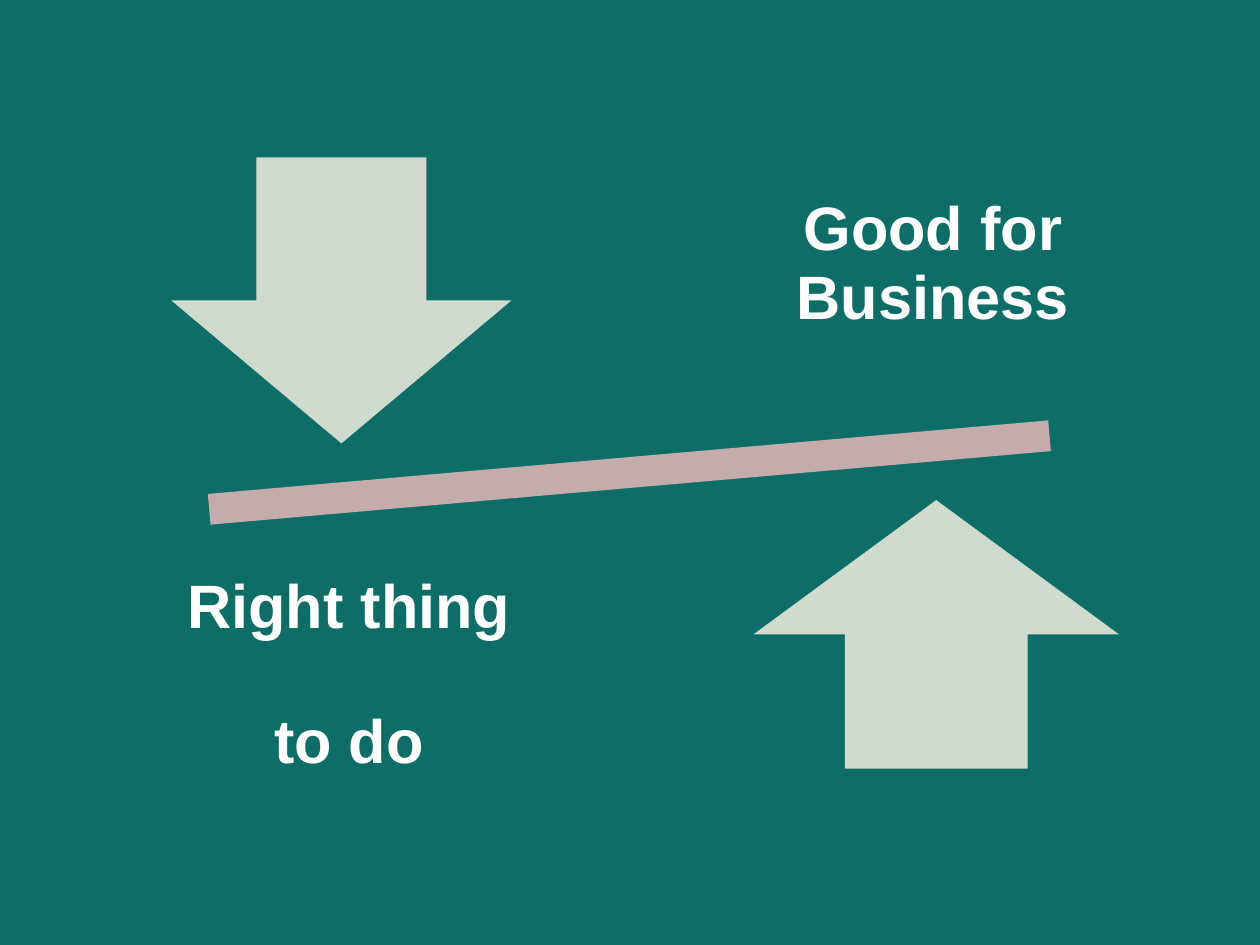
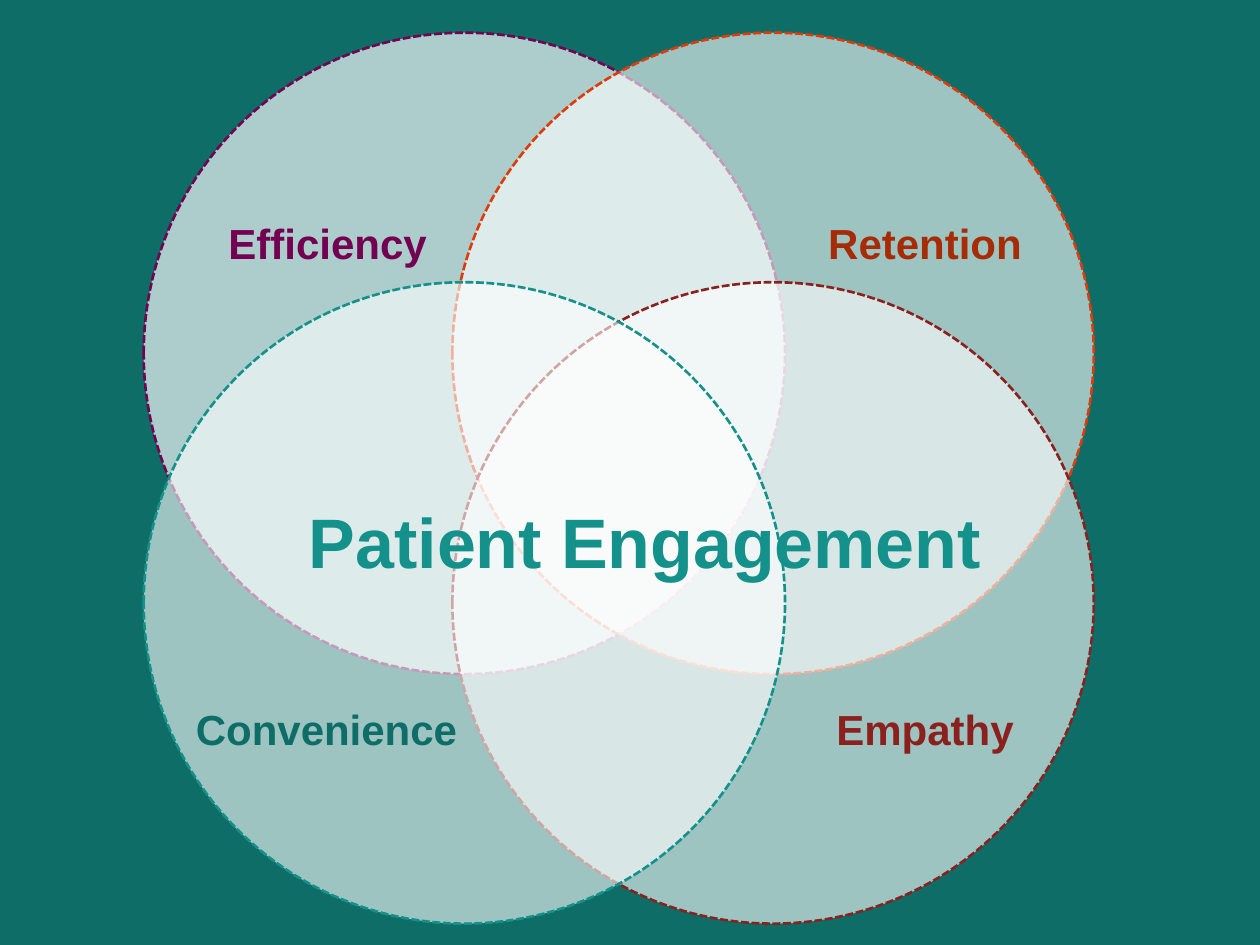
from lxml import etree
from pptx import Presentation
from pptx.dml.color import RGBColor
from pptx.enum import dml, shapes, text
from pptx.oxml import ns
from pptx.util import Pt

TEAL = RGBColor(0x0E, 0x6D, 0x67)
AQUA = RGBColor(0x13, 0x91, 0x8A)
SAGE = RGBColor(0xD0, 0xDB, 0xD0)
ROSE = RGBColor(0xC4, 0xAC, 0xAC)
WHITE = RGBColor(0xFF, 0xFF, 0xFF)
PLUM = RGBColor(0x73, 0x00, 0x51)
FLAME = RGBColor(0xDE, 0x3B, 0x0A)
RUST = RGBColor(0xA6, 0x2C, 0x08)
WINE = RGBColor(0x8B, 0x21, 0x1E)
FONT = "Arial"
KIND = shapes.MSO_SHAPE


def add_slide(deck):
    slide = deck.slides.add_slide(deck.slide_layouts[6])
    fill = slide.background.fill
    fill.solid()
    fill.fore_color.rgb = TEAL
    return slide


def add_shape(slide, kind, box, color, alpha=None, edge=None, turn=0):
    shape = slide.shapes.add_shape(kind, *map(Pt, box))
    shape.shadow.inherit = False
    shape.rotation = turn
    shape.fill.solid()
    shape.fill.fore_color.rgb = color
    if alpha is not None:
        tint = shape.fill._xPr.find(".//" + ns.qn("a:srgbClr"))
        etree.SubElement(tint, ns.qn("a:alpha")).set("val", str(alpha * 1000))
    if edge is None:
        shape.line.fill.background()
    else:
        shape.line.color.rgb = edge
        shape.line.width = Pt(1.5)
        shape.line.dash_style = dml.MSO_LINE.SQUARE_DOT


def add_text(slide, box, words, size=24, color=WHITE, inset=(7.2, 6.5),
             anchor=text.MSO_ANCHOR.TOP, pitch=1, gap=0):
    frame = slide.shapes.add_textbox(*map(Pt, box)).text_frame
    frame.word_wrap = True
    frame.vertical_anchor = anchor
    frame.margin_left = frame.margin_right = Pt(inset[0])
    frame.margin_top = Pt(inset[1])
    frame.margin_bottom = Pt(min(inset))
    frame.text = words
    for index, para in enumerate(frame.paragraphs):
        para.alignment = text.PP_ALIGN.CENTER
        para.line_spacing = pitch
        if index:
            para.space_before = Pt(gap)
        para.font.name = FONT
        para.font.size = Pt(size)
        para.font.bold = True
        para.font.color.rgb = color


def draw_scale(slide, box):
    left, top, width, height = box
    add_shape(slide, KIND.MATH_MINUS,
              (left, top + 142.6, width, 74.9), ROSE, turn=355)
    add_shape(slide, KIND.DOWN_ARROW, (left + 66.2, top, 194.4, 163.4), SAGE)
    add_shape(slide, KIND.UP_ARROW,
              (left + 398.9, top + height - 153.4, 208.8, 153.4), SAGE)
    style = dict(size=35, inset=(19.4, 19.4), pitch=0.94,
                 anchor=text.MSO_ANCHOR.MIDDLE, gap=37.5)
    add_text(slide, (left + 397.4, top + 2.2, 208.1, 118.1),
             "Good for Business", **style)
    add_text(slide, (left + 55.4, top + 233.3, 224.6, 125.3),
             "Right thing\nto do", **style)


def draw_venn(slide, box):
    left, top, width, height = box
    side = 366.5
    rings = [(0, 0, PLUM, 66), (1, 0, FLAME, 60),
             (1, 1, WINE, 60), (0, 1, AQUA, 60)]
    for col, row, edge, alpha in rings:
        spot = (left + col * (width - side), top + row * (height - side))
        add_shape(slide, KIND.OVAL, (*spot, side, side), WHITE, alpha, edge)
    labels = [("Efficiency", 0, 0, PLUM), ("Retention", 1, 0, RUST),
              ("Convenience", 0, 1, TEAL), ("Empathy", 1, 1, WINE)]
    for words, col, row, color in labels:
        mid = left + 103 + col * 343.5 + (1 - col) * (1 - row) * 0.7 + (1 - col) * 1.5
        add_text(slide, (mid - 105, top + 99.4 + row * 277.2, 210, 36),
                 words, color=color)
    add_text(slide, (left - 37.5, top + 258.5, 648, 90),
             "Patient Engagement", size=40, color=AQUA, inset=(7.2, 7.6))


def main():
    deck = Presentation()
    deck.slide_width, deck.slide_height = Pt(720), Pt(540)
    draw_scale(add_slide(deck), (31.7, 90, 655.9, 349.2))
    draw_venn(add_slide(deck), (82.1, 18.7, 542.9, 509.1))
    deck.save("out.pptx")


if __name__ == "__main__":
    main()
